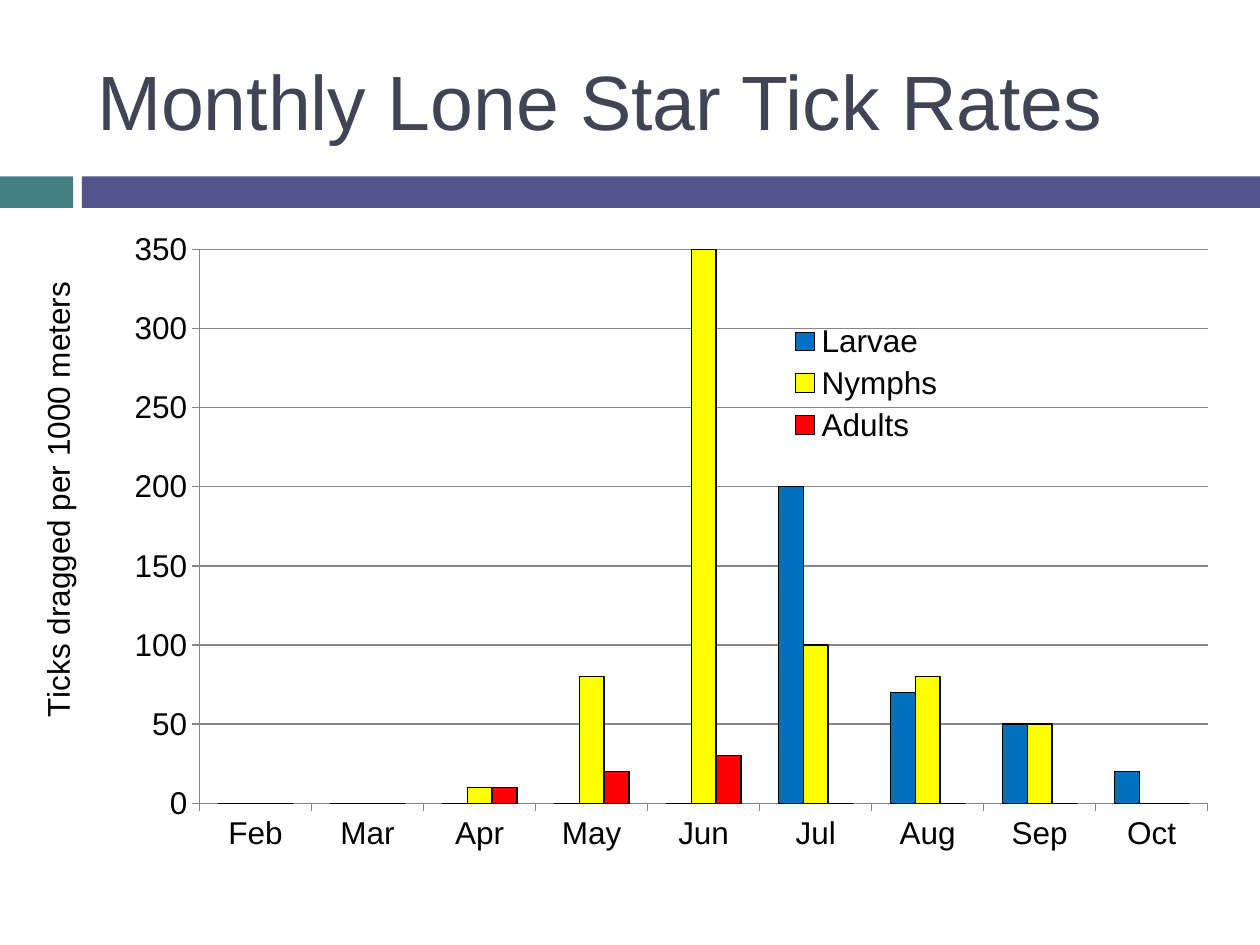
from lxml.etree import SubElement
from pptx import Presentation
from pptx.chart.data import CategoryChartData
from pptx.dml.color import RGBColor
from pptx.enum.chart import XL_CHART_TYPE, XL_LEGEND_POSITION, XL_TICK_MARK
from pptx.enum.shapes import MSO_SHAPE
from pptx.enum.text import MSO_ANCHOR, PP_ALIGN
from pptx.oxml.ns import qn
from pptx.util import Inches, Pt

TEAL = RGBColor(0x43, 0x80, 0x86)
PURPLE = RGBColor(0x53, 0x54, 0x8A)
SLATE = RGBColor(0x42, 0x44, 0x56)
BLUE = RGBColor(0x00, 0x70, 0xC0)
YELLOW = RGBColor(0xFF, 0xFF, 0x00)
RED = RGBColor(0xFF, 0x00, 0x00)
BLACK = RGBColor(0x00, 0x00, 0x00)
GRAY = RGBColor(0x86, 0x86, 0x86)
FONT = "Arial"

TITLE = "Monthly Lone Star Tick Rates"
AXIS_TITLE = "Ticks dragged per 1000 meters"
MONTHS = ["Feb", "Mar", "Apr", "May", "Jun", "Jul", "Aug", "Sep", "Oct"]
STAGES = [
    ("Larvae", BLUE, [0, 0, 0, 0, 0, 200, 70, 50, 20]),
    ("Nymphs", YELLOW, [0, 0, 10, 80, 350, 100, 80, 50, 0]),
    ("Adults", RED, [0, 0, 10, 20, 30, 0, 0, 0, 0]),
]
BANDS = [(0, 0.58, TEAL), (0.65, 9.35, PURPLE)]


def write_text(frame, text, size, color, bold=False, align=None):
    paragraph = frame.paragraphs[0]
    paragraph.alignment = align
    run = paragraph.add_run()
    run.text = text
    format_font(run.font, size, color, bold)


def format_font(font, size, color, bold=False):
    font.name = FONT
    font.size = Pt(size)
    font.bold = bold
    font.color.rgb = color


def place(element, before, **values):
    for old in element.findall(qn("c:layout")):
        element.remove(old)
    layout = SubElement(element, qn("c:layout"))
    manual = SubElement(layout, qn("c:manualLayout"))
    for name, value in values.items():
        SubElement(manual, qn(f"c:{name}")).set("val", str(value))
    follower = element.find(qn(before))
    if follower is not None:
        follower.addprevious(layout)


def add_bands(slide):
    for left, width, color in BANDS:
        band = slide.shapes.add_shape(
            MSO_SHAPE.RECTANGLE, Inches(left), Inches(1.4), Inches(width), Inches(0.25)
        )
        band.shadow.inherit = False
        band.fill.solid()
        band.fill.fore_color.rgb = color
        band.line.fill.background()


def add_title(slide):
    title = slide.shapes.title
    title.left, title.top = Inches(0.67), Inches(0.25)
    title.width, title.height = Inches(8.92), Inches(1.08)
    title.text_frame.vertical_anchor = MSO_ANCHOR.MIDDLE
    write_text(title.text_frame, TITLE, 44, SLATE, align=PP_ALIGN.LEFT)


def add_tick_chart(slide):
    data = CategoryChartData()
    data.categories = MONTHS
    for name, _, values in STAGES:
        data.add_series(name, values)
    chart = slide.shapes.add_chart(
        XL_CHART_TYPE.COLUMN_CLUSTERED,
        Inches(0.25), Inches(1.75), Inches(9.34), Inches(5.5), data,
    ).chart
    chart.has_title = False
    format_font(chart.font, 18, BLACK)

    plot = chart.plots[0]
    plot.gap_width = 150
    plot.overlap = 0
    plot.vary_by_categories = False
    for series, (_, color, _) in zip(plot.series, STAGES):
        series.invert_if_negative = False
        series.format.fill.solid()
        series.format.fill.fore_color.rgb = color
        series.format.line.color.rgb = BLACK
        series.format.line.width = Pt(0.75)

    value_axis = chart.value_axis
    value_axis.minimum_scale, value_axis.maximum_scale = 0, 350
    value_axis.major_unit = 50
    value_axis.has_major_gridlines = True
    for axis in (chart.category_axis, value_axis):
        axis.major_tick_mark = XL_TICK_MARK.OUTSIDE
        axis.minor_tick_mark = XL_TICK_MARK.NONE
        format_font(axis.tick_labels.font, 18, BLACK)
    for line_owner in (chart.category_axis, value_axis, value_axis.major_gridlines):
        line_owner.format.line.color.rgb = GRAY
        line_owner.format.line.width = Pt(0.75)
    axis_title = value_axis.axis_title
    write_text(axis_title.text_frame, AXIS_TITLE, 18, BLACK)
    properties = axis_title.text_frame._txBody.bodyPr
    properties.set("rot", "-5400000")
    properties.set("vert", "horz")
    place(axis_title._element, "c:overlay", xMode="edge", yMode="edge", x=0, y=0.08)

    chart.has_legend = True
    legend = chart.legend
    legend.position = XL_LEGEND_POSITION.RIGHT
    legend.include_in_layout = False
    format_font(legend.font, 18, BLACK)
    place(legend._element, "c:overlay", xMode="edge", yMode="edge",
          x=0.64, y=0.14, w=0.14, h=0.19)
    plot_area = chart._chartSpace.chart.plotArea
    place(plot_area, "c:barChart", layoutTarget="inner", xMode="edge", yMode="edge",
          x=0.143, y=0.042, w=0.857, h=0.799)


def main():
    presentation = Presentation()
    presentation.slide_width, presentation.slide_height = Inches(10), Inches(7.5)
    slide = presentation.slides.add_slide(presentation.slide_layouts[5])
    add_bands(slide)
    add_title(slide)
    add_tick_chart(slide)
    presentation.save("out.pptx")


if __name__ == "__main__":
    main()
